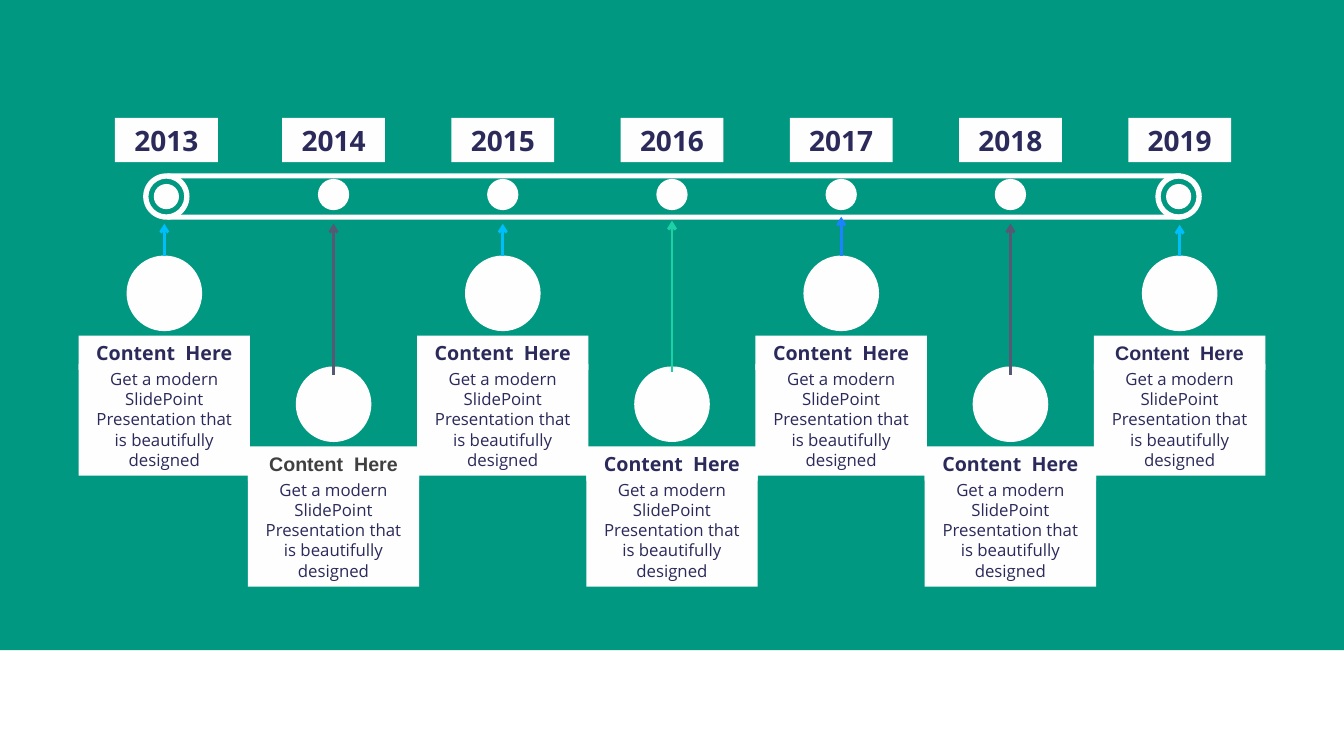
from lxml import etree
from pptx import Presentation
from pptx.dml.color import RGBColor
from pptx.enum.shapes import MSO_CONNECTOR, MSO_SHAPE
from pptx.enum.text import MSO_ANCHOR, MSO_AUTO_SIZE, PP_ALIGN
from pptx.oxml.ns import qn
from pptx.util import Inches, Pt

RECT, OVAL, DONUT = MSO_SHAPE.RECTANGLE, MSO_SHAPE.OVAL, MSO_SHAPE.DONUT
STRAIGHT = MSO_CONNECTOR.STRAIGHT
TOP, MIDDLE = MSO_ANCHOR.TOP, MSO_ANCHOR.MIDDLE
CENTER = PP_ALIGN.CENTER
GROW = MSO_AUTO_SIZE.SHAPE_TO_FIT_TEXT

COLORS = {
    "green": "009881", "white": "FEFEFE", "navy": "2B2A5B", "gray": "404040",
    "sky": "00BDFB", "slate": "565874", "mint": "1ED0A6", "blue": "1C82FF",
}
HEADING = "Content  Here"
BODY = "Get a modern SlidePoint Presentation that is beautifully designed"
# year, arrow colour, arrow start and tip, heading font and colour
MILESTONES = [
    ("2013", "sky", 2.54, 2.22, "Open Sans", "navy"),
    ("2014", "slate", 3.72, 2.22, "Arial", "gray"),
    ("2015", "sky", 2.54, 2.22, "Open Sans", "navy"),
    ("2016", "mint", 3.69, 2.19, "Open Sans", "navy"),
    ("2017", "blue", 2.54, 2.15, "Open Sans", "navy"),
    ("2018", "slate", 3.72, 2.22, "Open Sans", "navy"),
    ("2019", "sky", 2.54, 2.23, "Arial", "navy"),
]
FIRST_X, LAST_X = 1.63, 11.7
PITCH = (LAST_X - FIRST_X) / (len(MILESTONES) - 1)
RING_XS = (1.65, 11.69)
RING_Y = 1.95
DROP = 1.1
YEAR = {"size": Pt(20), "bold": True, "name": "Open Sans"}
HEAD = {"size": Pt(14), "bold": True}
TEXT = {"size": Pt(12), "bold": False, "name": "Open Sans"}


def rgb(name):
    return RGBColor.from_string(COLORS[name])


def add_shape(kind, x, y, w, h, color="white"):
    sp = s.shapes.add_shape(kind, Inches(x), Inches(y), Inches(w), Inches(h))
    sp.shadow.inherit = False
    sp.fill.solid()
    sp.fill.fore_color.rgb = rgb(color)
    sp.line.fill.background()
    return sp


def add_round(kind, cx, cy, d):
    return add_shape(kind, cx - d / 2, cy - d / 2, d, d)


def add_label(text, cx, y, w, h, anchor, font, color="navy"):
    tf = add_shape(RECT, cx - w / 2, y, w, h).text_frame
    tf.word_wrap = True
    tf.auto_size = GROW
    tf.vertical_anchor = anchor
    p = tf.paragraphs[0]
    p.alignment = CENTER
    r = p.add_run()
    r.text = text
    for key, value in font.items():
        setattr(r.font, key, value)
    r.font.color.rgb = rgb(color)


def add_arrow(x, start, tip, color):
    c = s.shapes.add_connector(STRAIGHT, Inches(x), Inches(start), Inches(x), Inches(tip))
    c.line.color.rgb = rgb(color)
    c.line.width = Pt(2)
    etree.SubElement(c.line._get_or_add_ln(), qn("a:tailEnd"), type="arrow")
    etree.SubElement(c._element.spPr, qn("a:effectLst"))


prs = Presentation()
prs.slide_width, prs.slide_height = Inches(13.33), Inches(7.5)
s = prs.slides.add_slide(prs.slide_layouts[6])

add_shape(RECT, 0, 0, 13.33, 6.45, "green")
for y in (1.72, 2.13):
    add_shape(RECT, 1.66, y, 10.05, 0.05)
for x in RING_XS:
    add_round(DONUT, x, RING_Y, 0.46).adjustments[0] = 0.114
    add_round(OVAL, x, RING_Y, 0.25)

for i, (year, color, start, tip, face, ink) in enumerate(MILESTONES):
    x = FIRST_X + i * PITCH
    drop = DROP * (i % 2)
    add_label(year, RING_XS[0] if i == 0 else x, 1.17, 1.02, 0.44, MIDDLE, YEAR)
    if 0 < i < len(MILESTONES) - 1:
        add_round(OVAL, x, 1.93, 0.31)
    add_round(OVAL, x, 2.91 + drop, 0.75)
    add_label(HEADING, x, 3.33 + drop, 1.7, 0.34, MIDDLE, {**HEAD, "name": face}, ink)
    add_label(BODY, x, 3.61 + drop, 1.7, 1.11, TOP, TEXT)
    add_arrow(x, start, tip, color)

prs.save("out.pptx")
